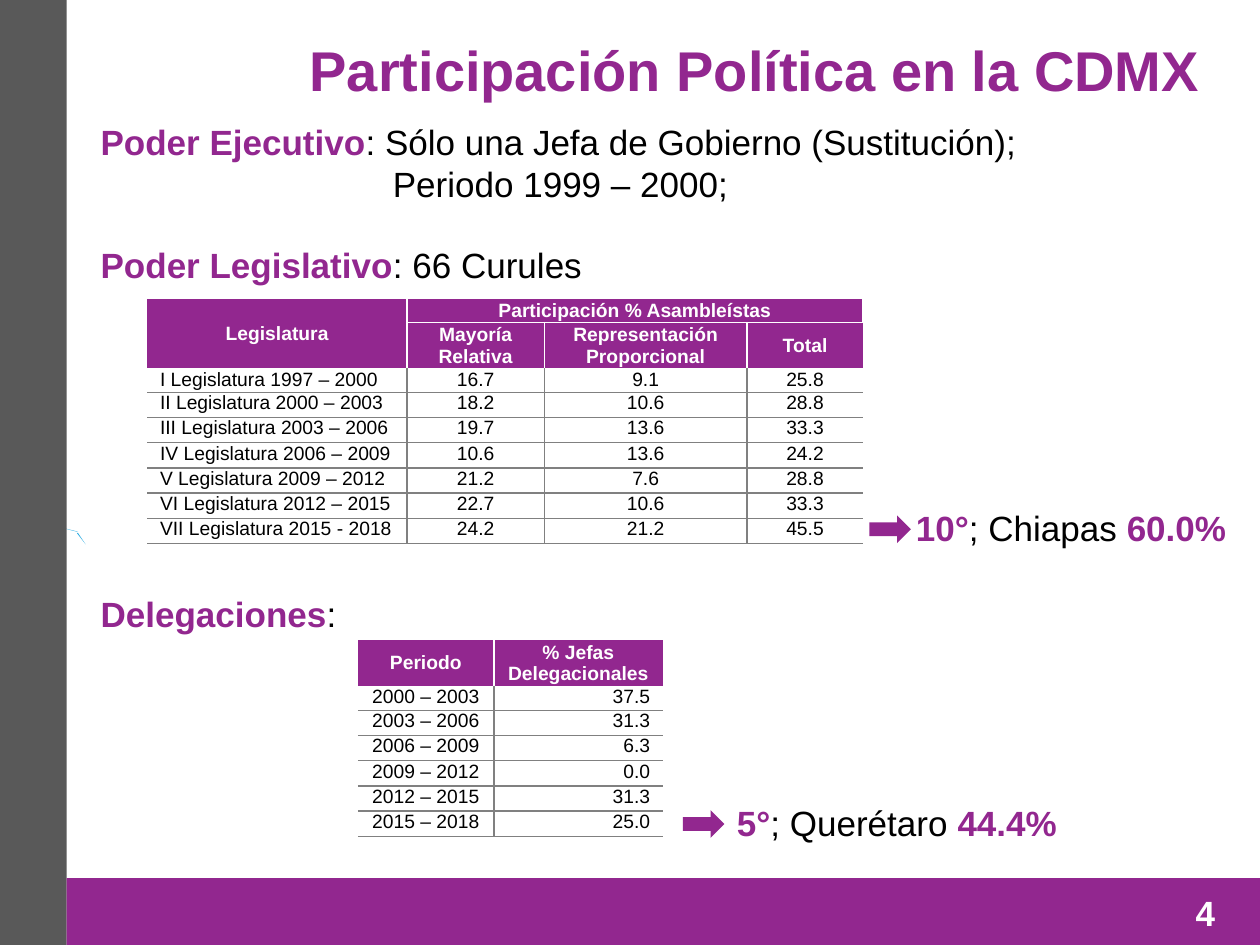
from pptx import Presentation
from pptx.dml.color import RGBColor
from pptx.enum.shapes import MSO_SHAPE as Shape
from pptx.enum.text import MSO_ANCHOR as Anchor, PP_ALIGN as Align
from pptx.oxml.ns import qn
from pptx.util import Inches, Pt
from lxml.etree import SubElement

PURPLE = RGBColor(0x92, 0x27, 0x8F)
GRAY = RGBColor(0x59, 0x59, 0x59)
RULE = RGBColor(0x80, 0x80, 0x80)
BLUE = RGBColor(0x29, 0xAB, 0xE2)
BLACK = RGBColor(0, 0, 0)
WHITE = RGBColor(255, 255, 255)
FONT = "Arial"
WIDTH, HEIGHT, BAND = 10, 7.5, 0.53
NO_STYLE = "{2D5ABB26-0587-4C30-8999-92F81FD0307C}"

# Content: in each line, spans marked True are bold and purple
TITLE = "Participación Política en la CDMX"
PAGE_NUMBER = "4"
NOTES = [  # left, top, width, height, lines of (indent, spans)
    (0.7, 0.91, 7.6, 1.11, [
        (0, [("Poder Ejecutivo", True), (": Sólo una Jefa de Gobierno (Sustitución);", False)]),
        (2.32, [("Periodo 1999 – 2000;", False)])]),
    (0.7, 1.88, 4.05, 0.44, [(0, [("Poder Legislativo", True), (": 66 Curules", False)])]),
    (0.7, 4.65, 2.09, 0.44, [(0, [("Delegaciones", True), (":", False)])]),
    (7.17, 3.97, 2.68, 0.44, [(0, [("10°", True), ("; Chiapas ", False), ("60.0%", True)])]),
    (5.75, 6.31, 2.76, 0.44, [(0, [("5°", True), ("; Querétaro ", False), ("44.4%", True)])]),
]
ARROWS = [(6.9, 4.09), (5.42, 6.43)]
SLIVERS = [
    [(0.62, 4.22), (0.22, 4.12), (0.61, 4.22)],
    [(0.61, 4.23), (0.68, 4.32), (0.62, 4.23)],
]
LEGISLATURES = dict(
    at=(1.17, 2.37), columns=[2.06, 1.09, 1.61, 0.92],
    heights=[0.19, 0.37, 0.18] + [0.2] * 6, header_rows=2,
    aligns=[Align.LEFT, Align.CENTER, Align.CENTER, Align.CENTER],
    merges=[((0, 0), (1, 0)), ((0, 1), (0, 3))],
    rows=[
        ("Legislatura", "Participación % Asambleístas", "", ""),
        ("", "Mayoría Relativa", "Representación Proporcional", "Total"),
        ("I Legislatura 1997 – 2000", "16.7", "9.1", "25.8"),
        ("II Legislatura 2000 – 2003", "18.2", "10.6", "28.8"),
        ("III Legislatura 2003 – 2006", "19.7", "13.6", "33.3"),
        ("IV Legislatura 2006 – 2009", "10.6", "13.6", "24.2"),
        ("V Legislatura 2009 – 2012", "21.2", "7.6", "28.8"),
        ("VI Legislatura 2012 – 2015", "22.7", "10.6", "33.3"),
        ("VII Legislatura 2015 - 2018", "24.2", "21.2", "45.5"),
    ])
DELEGATIONS = dict(
    at=(2.84, 5.08), columns=[1.08, 1.34],
    heights=[0.36, 0.19] + [0.2] * 5, header_rows=1,
    aligns=[Align.CENTER, Align.RIGHT], merges=[],
    rows=[
        ("Periodo", "% Jefas Delegacionales"),
        ("2000 – 2003", "37.5"),
        ("2003 – 2006", "31.3"),
        ("2006 – 2009", "6.3"),
        ("2009 – 2012", "0.0"),
        ("2012 – 2015", "31.3"),
        ("2015 – 2018", "25.0"),
    ])


def add_span(para, text, size, color, bold):
    span = para.add_run()
    span.text = text
    font = span.font
    font.name, font.size, font.bold = FONT, Pt(size), bold
    font.color.rgb = color


def paint(shape, color):
    shape.shadow.inherit = False
    shape.fill.solid()
    shape.fill.fore_color.rgb = color
    shape.line.fill.background()


def add_block(page, kind, left, top, width, height, color):
    paint(page.shapes.add_shape(kind, *map(Inches, (left, top, width, height))), color)


def add_box(page, left, top, width, height):
    box = page.shapes.add_textbox(*map(Inches, (left, top, width, height)))
    box.text_frame.word_wrap = False
    return box.text_frame


def set_borders(cell, edges):
    props = cell._tc.get_or_add_tcPr()
    for side in "LRTB":
        color = edges.get(side)
        line = SubElement(props, qn(f"a:ln{side}"), w=str(Pt(1) if color else 0))
        if color:
            fill = SubElement(line, qn("a:solidFill"))
            SubElement(fill, qn("a:srgbClr"), val=str(color))
        else:
            SubElement(line, qn("a:noFill"))


def add_grid(page, at, columns, heights, header_rows, aligns, merges, rows):
    frame = page.shapes.add_table(
        len(rows), len(columns), *map(Inches, (*at, sum(columns), sum(heights))))
    table = frame.table
    table._tbl.tblPr.find(qn("a:tableStyleId")).text = NO_STYLE
    for column, width in zip(table.columns, columns):
        column.width = Inches(width)
    for row, height in zip(table.rows, heights):
        row.height = Inches(height)
    for first, last in merges:
        table.cell(*first).merge(table.cell(*last))
    for r, texts in enumerate(rows):
        header = r < header_rows
        rule = WHITE if header else RULE
        for c, text in enumerate(texts):
            cell = table.cell(r, c)
            cell.margin_top = cell.margin_bottom = 0
            cell.vertical_anchor = Anchor.MIDDLE if header else Anchor.TOP
            # Rules run between cells and under the last row
            edges = {"B": rule}
            if r:
                edges["T"] = WHITE if r <= header_rows else RULE
            if c:
                edges["L"] = rule
            if c < len(columns) - 1:
                edges["R"] = rule
            set_borders(cell, edges)
            if header:
                cell.fill.solid()
                cell.fill.fore_color.rgb = PURPLE
            else:
                cell.fill.background()
            para = cell.text_frame.paragraphs[0]
            para.alignment = Align.CENTER if header else aligns[c]
            if text:
                add_span(para, text, 11, WHITE if header else BLACK, header)


def main():
    deck = Presentation()
    deck.slide_width, deck.slide_height = Inches(WIDTH), Inches(HEIGHT)
    page = deck.slides.add_slide(deck.slide_layouts[5])

    # Background slivers, then side and bottom bands
    for start, *others in SLIVERS:
        builder = page.shapes.build_freeform(*map(Inches, start), scale=1.0)
        builder.add_line_segments([(Inches(x), Inches(y)) for x, y in others], close=True)
        paint(builder.convert_to_shape(), BLUE)
    add_block(page, Shape.RECTANGLE, 0, 0, BAND, HEIGHT, GRAY)
    add_block(page, Shape.RECTANGLE, BAND, HEIGHT - BAND, WIDTH - BAND, BAND, PURPLE)

    # Title
    title = page.shapes.title
    title.left, title.top, title.width, title.height = map(Inches, (2.31, 0.23, 7.32, 0.64))
    title.text_frame.word_wrap = False
    title.text_frame.vertical_anchor = Anchor.TOP
    para = title.text_frame.paragraphs[0]
    para.alignment = Align.RIGHT
    add_span(para, TITLE, 32, PURPLE, True)

    # Section headings and remarks
    for *place, lines in NOTES:
        text = add_box(page, *place)
        for i, (indent, spans) in enumerate(lines):
            para = text.add_paragraph() if i else text.paragraphs[0]
            if indent:
                para._p.get_or_add_pPr().set("marL", str(Inches(indent)))
            for words, strong in spans:
                add_span(para, words, 20, PURPLE if strong else BLACK, strong)

    # Tables, with an arrow from each last row to its remark
    add_grid(page, **LEGISLATURES)
    add_grid(page, **DELEGATIONS)
    for left, top in ARROWS:
        add_block(page, Shape.RIGHT_ARROW, left, top, 0.33, 0.22, PURPLE)

    # Page number
    number = add_box(page, 9.39, 7.03, 0.36, 0.44)
    add_span(number.paragraphs[0], PAGE_NUMBER, 20, WHITE, True)

    deck.save("out.pptx")


if __name__ == "__main__":
    main()
